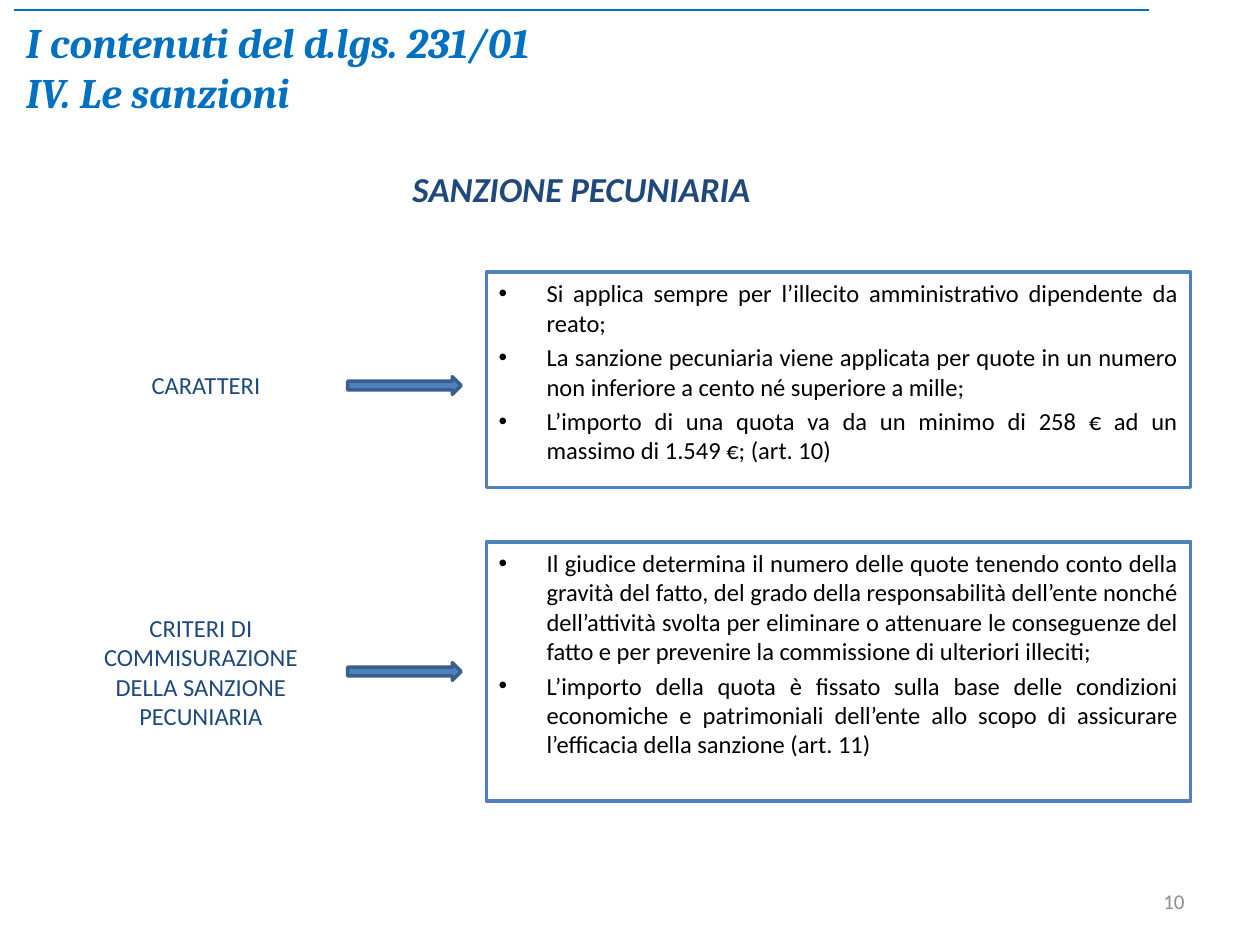
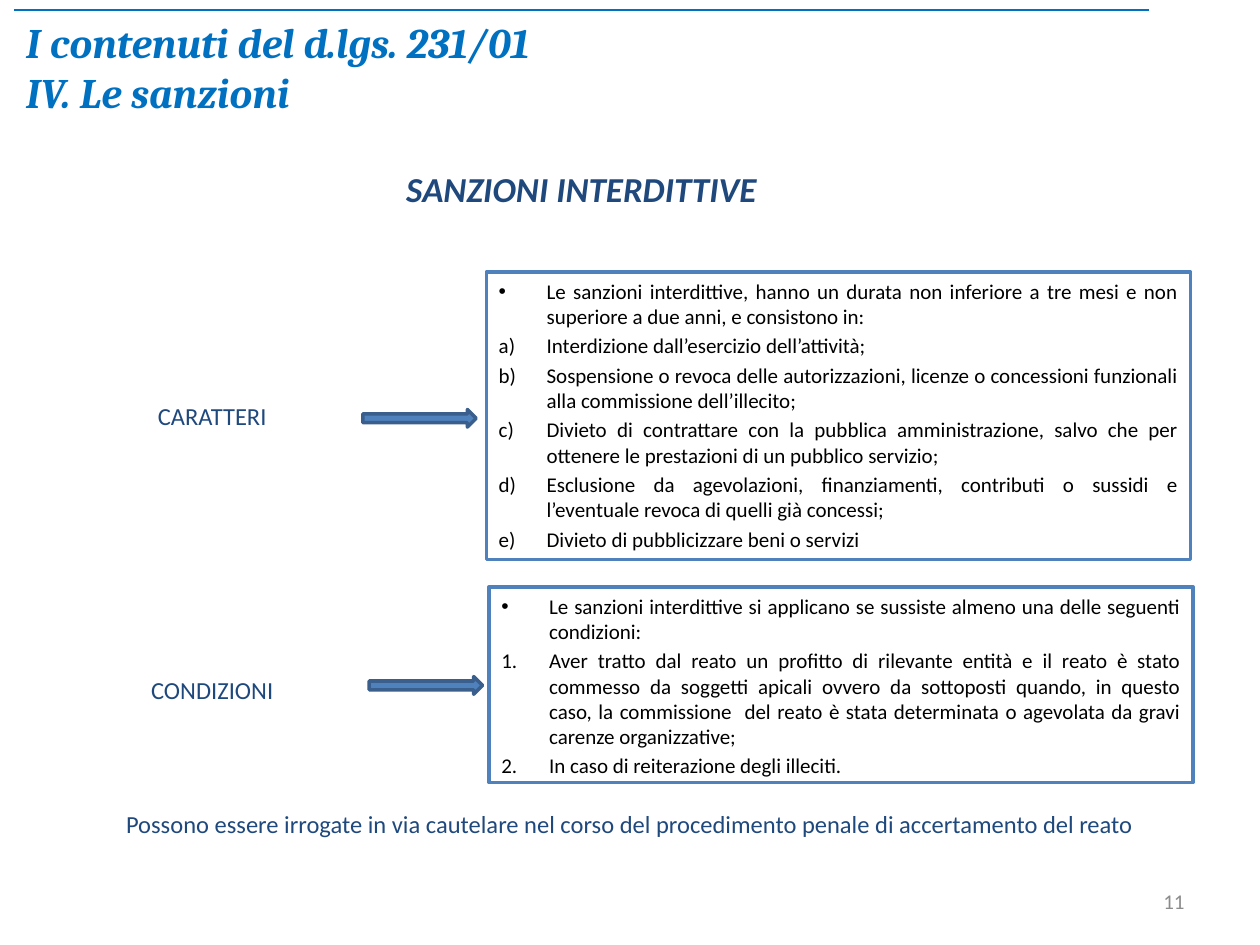
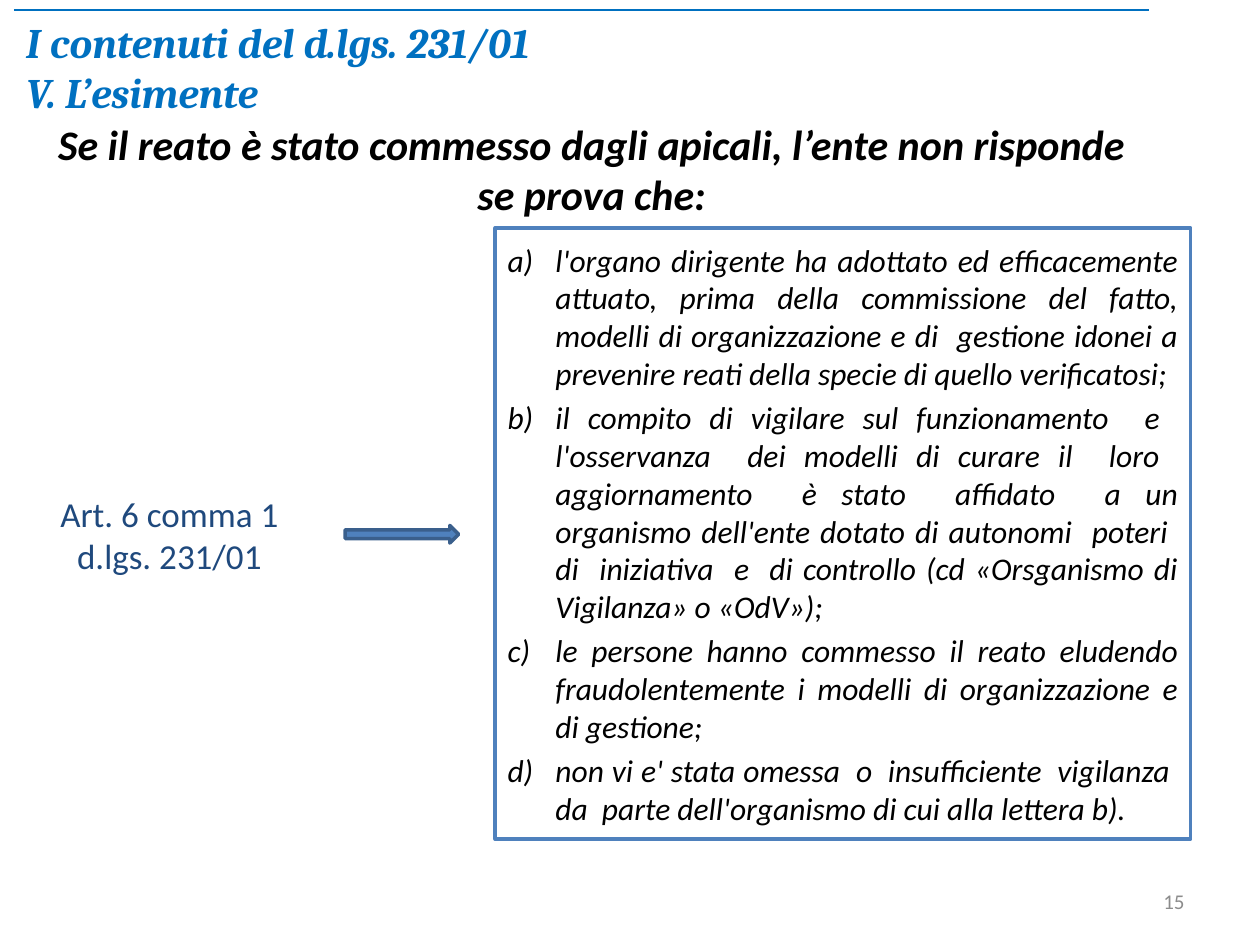
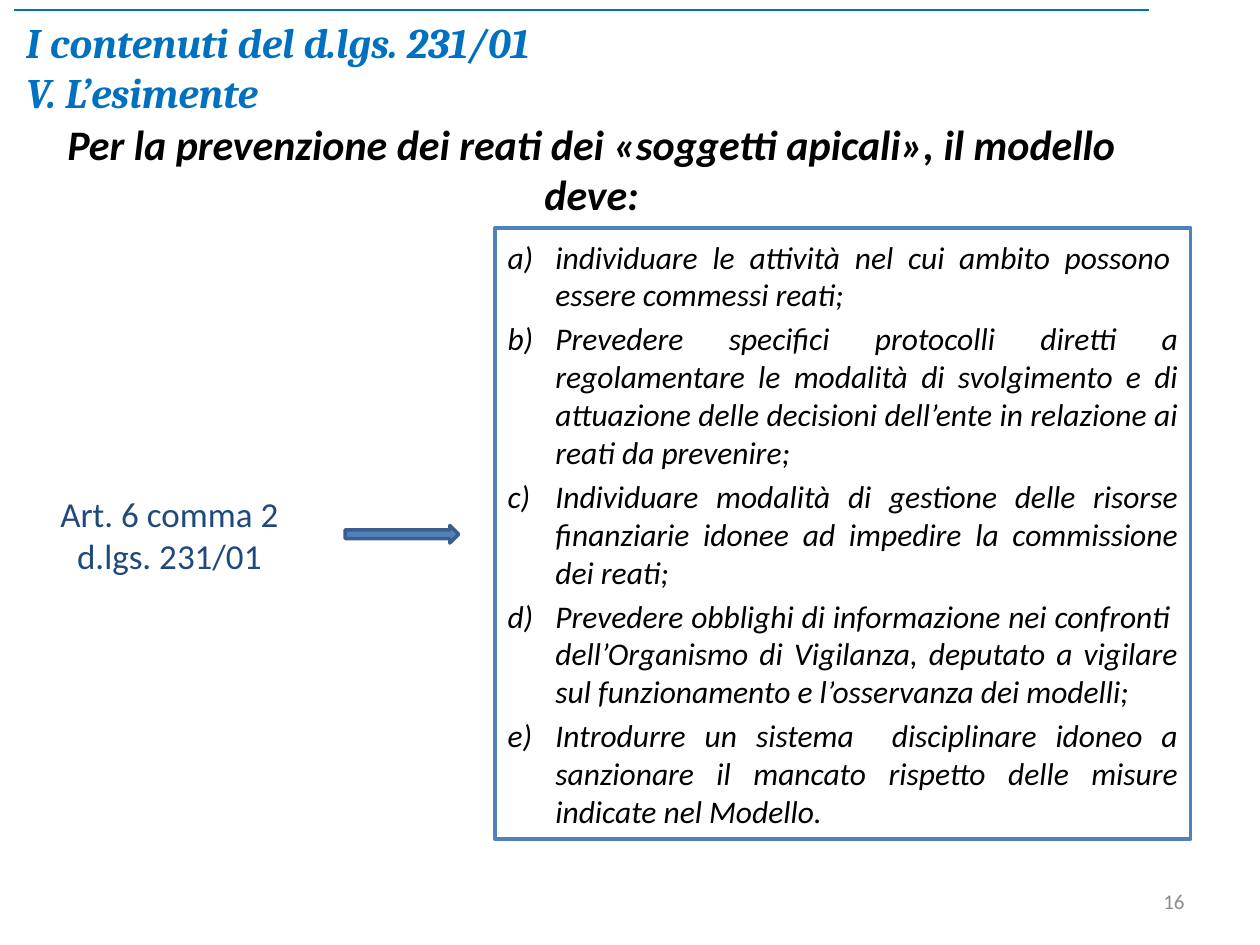
import lxml.etree
import pptx
import pptx.dml.color
import pptx.enum.shapes
import pptx.enum.text
import pptx.oxml.ns
import pptx.util

SCALE = 9144  # EMU in one px, 100 px to the inch
INK = {
    "head": "0070C0",
    "navy": "1F497D",
    "blue": "4F81BD",
    "edge": "3A5F8C",
    "text": "000000",
    "back": "FFFFFF",
    "gray": "8C8C8C",
}
INDENT = 38
ARROW = (90, 14)
ALIGN = pptx.enum.text.PP_ALIGN
ANCHOR = pptx.enum.text.MSO_ANCHOR
SHAPE = pptx.enum.shapes.MSO_SHAPE
NUMBERS = {"a)": "alphaLcParenR", "1.": "arabicPeriod"}


def px(*sizes):
    return [pptx.util.Emu(size * SCALE) for size in sizes]


def color(name):
    return pptx.dml.color.RGBColor.from_string(INK[name])


def add_mark(para, mark):
    """Give the paragraph a hanging bullet or automatic number."""
    props = para._p.get_or_add_pPr()
    props.set("marL", str(INDENT * SCALE))
    props.set("indent", str(-INDENT * SCALE))
    qn = pptx.oxml.ns.qn
    if mark in NUMBERS:
        lxml.etree.SubElement(props, qn("a:buAutoNum"), type=NUMBERS[mark])
    else:
        lxml.etree.SubElement(props, qn("a:buFont"), typeface="Arial")
        lxml.etree.SubElement(props, qn("a:buChar"), char=mark)


class Deck:
    def __init__(self):
        self.file = pptx.Presentation()
        self.file.slide_width, self.file.slide_height = px(1000, 750)
        self.slide = None

    def start(self, topic, number):
        """Open a slide with the shared heading, rule and page number."""
        self.slide = self.file.slides.add_slide(self.file.slide_layouts[6])
        self.label((11, 8, 812, 235), ["I contenuti del d.lgs. 231/01", topic],
                   24, "head", face="Cambria", bold=True, italic=True,
                   align=ALIGN.LEFT, anchor=ANCHOR.TOP)
        self.rule(11, 8, 912)
        self.label((717, 695, 233, 40), [number], 12, "gray", align=ALIGN.RIGHT)

    def rule(self, left, top, right):
        line = self.slide.shapes.add_connector(
            pptx.enum.shapes.MSO_CONNECTOR.STRAIGHT, *px(left, top, right, top))
        line.line.color.rgb = color("head")
        line.line.width = pptx.util.Pt(1)
        lxml.etree.SubElement(line._element.spPr, pptx.oxml.ns.qn("a:effectLst"))

    def fill_text(self, shape, lines, size, ink, face="Calibri", bold=False,
                  italic=False, align=ALIGN.CENTER, anchor=ANCHOR.MIDDLE, gap=0):
        """Fill a shape with lines, each a text or a (mark, text) pair."""
        frame = shape.text_frame
        frame.word_wrap = True
        frame.vertical_anchor = anchor
        for index, line in enumerate(lines):
            para = frame.add_paragraph() if index else frame.paragraphs[0]
            mark, text = line if isinstance(line, tuple) else (None, line)
            para.text = text
            para.alignment = align
            para.space_before = pptx.util.Pt(gap)
            if mark:
                add_mark(para, mark)
            font = para.font
            font.name, font.size = face, pptx.util.Pt(size)
            font.bold, font.italic = bold, italic
            font.color.rgb = color(ink)

    def label(self, area, lines, size, ink, **style):
        box = self.slide.shapes.add_textbox(*px(*area))
        self.fill_text(box, lines, size, ink, **style)

    def title(self, area, text, size, ink):
        self.label(area, [text], size, ink, bold=True, italic=True)

    def note(self, area, text, size=14):
        self.label(area, [text], size, "navy", gap=size / 5)

    def shape(self, kind, area, fill, edge):
        shape = self.slide.shapes.add_shape(kind, *px(*area))
        shape.shadow.inherit = False
        shape.fill.solid()
        shape.fill.fore_color.rgb = color(fill)
        shape.line.color.rgb = color(edge)
        shape.line.width = pptx.util.Pt(2)
        return shape

    def panel(self, area, items, size, **style):
        box = self.shape(SHAPE.RECTANGLE, area, "back", "blue")
        self.fill_text(box, items, size, "text", align=ALIGN.JUSTIFY, gap=size / 5, **style)

    def arrow(self, left, top):
        self.shape(SHAPE.RIGHT_ARROW, (left, top, *ARROW), "blue", "edge")


def add_fine(deck, topic, number, title, rows, size):
    """Add a slide of rows: a label, an arrow and a panel of points."""
    deck.start(topic, number)
    deck.title((11, 105, 901, 90), title, 20, "navy")
    for name, place, arrow, area, items in rows:
        deck.note(place, name)
        deck.arrow(*arrow)
        deck.panel(area, items, size, anchor=ANCHOR.TOP)


def add_proof(deck, number, title, source, items):
    """Add a slide with one lettered panel and the article it comes from."""
    deck.start("V. L’esimente", number)
    deck.title((19, 89, 901, 90), title, 24, "text")
    deck.panel((393, 181, 552, 485), [("a)", item) for item in items], 18, italic=True)
    deck.arrow(274, 417)
    deck.note((23, 310, 223, 228), source, 20)


def main():
    deck = Deck()
    fines = "IV. Le sanzioni"
    add_fine(deck, fines, "10", "SANZIONE PECUNIARIA", [
        ("CARATTERI", (52, 231, 223, 149), (276, 299), (386, 216, 559, 171), [
            ("•", "Si applica sempre per l’illecito amministrativo dipendente da reato;"),
            ("•", "La sanzione pecuniaria viene applicata per quote in un numero non "
                  "inferiore a cento né superiore a mille;"),
            ("•", "L’importo di una quota va da un minimo di 258 € ad un massimo di "
                  "1.549 €; (art. 10)"),
        ]),
        ("CRITERI DI COMMISURAZIONE DELLA SANZIONE PECUNIARIA",
         (48, 430, 223, 206), (276, 526), (386, 430, 559, 206), [
            ("•", "Il giudice determina il numero delle quote tenendo conto della gravità "
                  "del fatto, del grado della responsabilità dell’ente nonché "
                  "dell’attività svolta per eliminare o attenuare le conseguenze del "
                  "fatto e per prevenire la commissione di ulteriori illeciti;"),
            ("•", "L’importo della quota è fissato sulla base delle condizioni economiche "
                  "e patrimoniali dell’ente allo scopo di assicurare l’efficacia della "
                  "sanzione (art. 11)"),
         ]),
    ], 14)

    add_fine(deck, fines, "11", "SANZIONI INTERDITTIVE", [
        ("CARATTERI", (57, 216, 223, 228), (288, 325), (386, 216, 559, 228), [
            ("•", "Le sanzioni interdittive, hanno un durata non inferiore a tre mesi e "
                  "non superiore a due anni, e consistono in:"),
            ("a)", "Interdizione dall’esercizio dell’attività;"),
            ("a)", "Sospensione o revoca delle autorizzazioni, licenze o concessioni "
                   "funzionali alla commissione dell’illecito;"),
            ("a)", "Divieto di contrattare con la pubblica amministrazione, salvo che per "
                   "ottenere le prestazioni di un pubblico servizio;"),
            ("a)", "Esclusione da agevolazioni, finanziamenti, contributi o sussidi e "
                   "l’eventuale revoca di quelli già concessi;"),
            ("a)", "Divieto di pubblicizzare beni o servizi"),
        ]),
        ("CONDIZIONI", (57, 470, 223, 155), (293, 537), (388, 466, 559, 155), [
            ("•", "Le sanzioni interdittive si applicano se sussiste almeno una delle "
                  "seguenti condizioni:"),
            ("1.", "Aver tratto dal reato un profitto di rilevante entità e il reato è "
                   "stato commesso da soggetti apicali ovvero da sottoposti quando, in "
                   "questo caso, la commissione  del reato è stata determinata o "
                   "agevolata da gravi carenze organizzative;"),
            ("1.", "In caso di reiterazione degli illeciti."),
        ]),
    ], 12)
    deck.note((70, 640, 860, 28), "Possono essere irrogate in via cautelare nel corso del "
              "procedimento penale di accertamento del reato")

    add_proof(
        deck, "15",
        "Se il reato è stato commesso dagli apicali, l’ente non risponde se prova che:",
        "Art. 6 comma 1 d.lgs. 231/01", [
            "l'organo dirigente ha adottato ed efficacemente attuato, prima della "
            "commissione del fatto, modelli di organizzazione e di  gestione idonei a "
            "prevenire reati della specie di quello verificatosi;",
            "il compito di vigilare sul funzionamento  e  l'osservanza  dei modelli di "
            "curare il  loro  aggiornamento  è stato  affidato  a un organismo dell'ente "
            "dotato di autonomi  poteri  di  iniziativa  e  di controllo (cd «Orsganismo "
            "di Vigilanza» o «OdV»);",
            "le persone hanno commesso il reato eludendo fraudolentemente i modelli di "
            "organizzazione e di gestione;",
            "non vi e' stata omessa  o  insufficiente  vigilanza  da  parte "
            "dell'organismo di cui alla lettera b).",
        ])

    add_proof(
        deck, "16",
        "Per la prevenzione dei reati dei «soggetti apicali», il modello deve:",
        "Art. 6 comma 2 d.lgs. 231/01", [
            "individuare  le  attività  nel  cui  ambito  possono  essere commessi reati;",
            "Prevedere specifici protocolli diretti a regolamentare le modalità di "
            "svolgimento e di attuazione delle decisioni dell’ente in relazione ai reati "
            "da prevenire;",
            "Individuare modalità di gestione delle risorse finanziarie idonee ad "
            "impedire la commissione dei reati;",
            "Prevedere obblighi di informazione nei confronti  dell’Organismo di "
            "Vigilanza, deputato a vigilare sul funzionamento e l’osservanza dei modelli;",
            "Introdurre un sistema  disciplinare idoneo a sanzionare il mancato rispetto "
            "delle misure indicate nel Modello.",
        ])
    deck.file.save("out.pptx")


if __name__ == "__main__":
    main()
